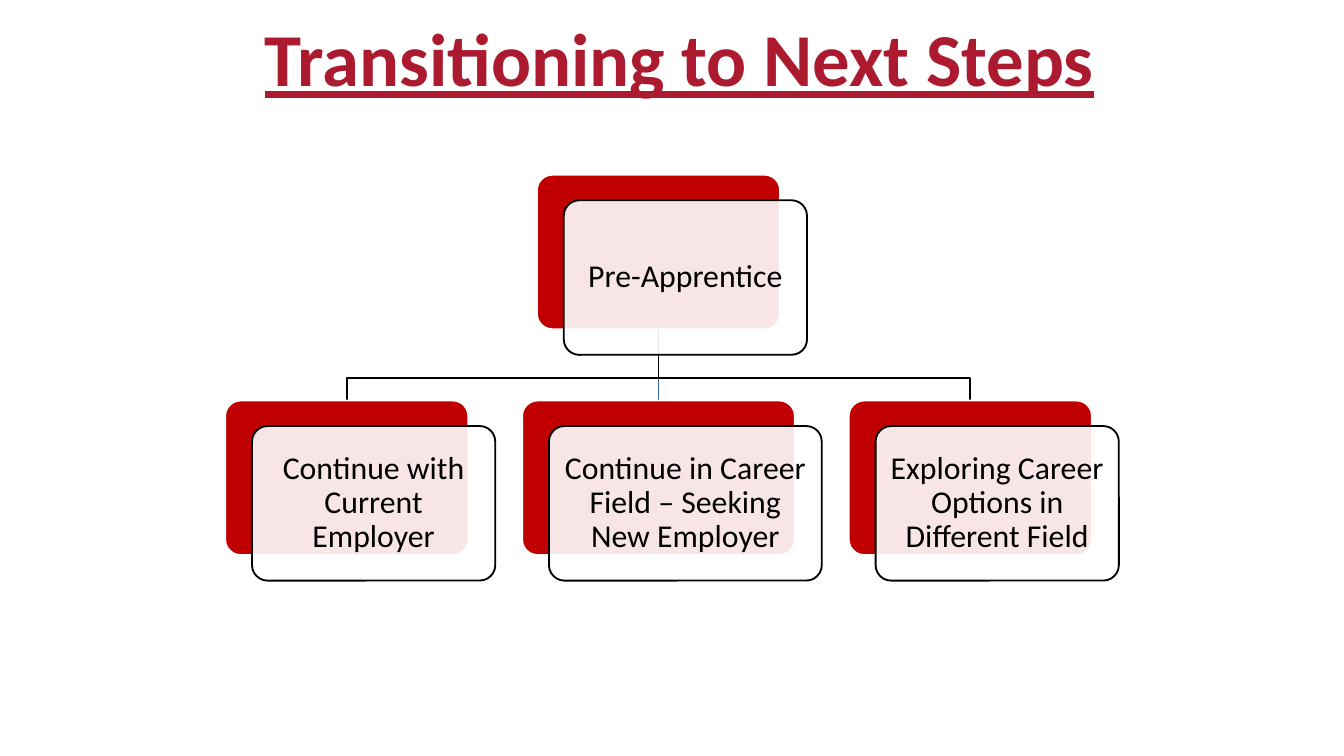
from lxml.etree import SubElement
from pptx import Presentation
from pptx.dml.color import RGBColor
from pptx.enum.shapes import MSO_CONNECTOR, MSO_SHAPE
from pptx.enum.text import MSO_ANCHOR as Anchor, PP_ALIGN as Align
from pptx.oxml.ns import qn
from pptx.util import Inches, Pt

COLORS = {"title": "AC1A2F", "back": "C00000", "card": "FFFFFF",
          "ink": "000000", "middle_line": "365B9D"}
FONT = "Calibri"

# Org chart grid, in inches
CENTER = 4.9
BRANCH = 2.32
NODE_W, WIDE_W, NODE_H = 1.81, 2.03, 1.15
ROOT_TOP, OPTION_TOP = 1.3, 2.98
ROOT_BOTTOM = ROOT_TOP + NODE_H
BUS_Y = 2.81
CARD_DX, CARD_DY = 0.2, 0.19

OPTIONS = [
    ("Continue with Current Employer", CENTER - BRANCH, NODE_W),
    ("Continue in Career Field – Seeking New Employer", CENTER, WIDE_W),
    ("Exploring Career Options in Different Field", CENTER + BRANCH, NODE_W),
]


def rgb(name):
    return RGBColor.from_string(COLORS[name])


def style_line(line, color):
    line.color.rgb = rgb(color)
    line.width = Pt(1)


def style_text(frame, text, size, color, inset_x, inset_y):
    frame.word_wrap = True
    frame.vertical_anchor = Anchor.MIDDLE
    frame.margin_left = frame.margin_right = Inches(inset_x)
    frame.margin_top = frame.margin_bottom = Inches(inset_y)
    paragraph = frame.paragraphs[0]
    paragraph.text = text
    paragraph.alignment = Align.CENTER
    paragraph.line_spacing = 0.9
    font = paragraph.font
    font.name, font.size, font.color.rgb = FONT, Pt(size), rgb(color)
    return font


def add_title(slide, text):
    title = slide.shapes.title
    title.left, title.top = Inches(0.4), Inches(0.09)
    title.width, title.height = Inches(9.31), Inches(0.75)
    font = style_text(title.text_frame, text, 40, "title", 0.1, 0.05)
    font.bold = font.underline = True


def add_elbow(slide, end_x):
    """Line from the root down to the bus, across, and down to an option."""
    builder = slide.shapes.build_freeform(Inches(CENTER), Inches(ROOT_BOTTOM))
    corners = [(CENTER, BUS_Y), (end_x, BUS_Y), (end_x, OPTION_TOP)]
    builder.add_line_segments([(Inches(x), Inches(y)) for x, y in corners],
                              close=False)
    elbow = builder.convert_to_shape()
    elbow.shadow.inherit = False
    elbow.fill.background()
    style_line(elbow.line, "ink")


def add_drop(slide):
    """Straight line from the root to the middle option."""
    drop = slide.shapes.add_connector(
        MSO_CONNECTOR.STRAIGHT, Inches(CENTER), Inches(ROOT_BOTTOM),
        Inches(CENTER), Inches(OPTION_TOP))
    style_line(drop.line, "middle_line")
    SubElement(drop._element.spPr, qn("a:effectLst"))


def add_panel(slide, left, top, width, fill, line):
    panel = slide.shapes.add_shape(
        MSO_SHAPE.ROUNDED_RECTANGLE,
        Inches(left), Inches(top), Inches(width), Inches(NODE_H))
    panel.adjustments[0] = 0.1
    panel.shadow.inherit = False
    panel.fill.solid()
    panel.fill.fore_color.rgb = rgb(fill)
    style_line(panel.line, line)
    return panel


def add_node(slide, text, center, top, width):
    """Red panel with a translucent text card offset in front of it."""
    left = center - width / 2
    add_panel(slide, left, top, width, "back", "card")
    card = add_panel(slide, left + CARD_DX, top + CARD_DY, width, "card", "ink")
    card_color = card._element.spPr.find(qn("a:solidFill"))[0]
    SubElement(card_color, qn("a:alpha"), val="90000")
    style_text(card.text_frame, text, 17, "ink", 0.06, 0.06)


def main():
    prs = Presentation()
    prs.slide_width = Inches(10)
    prs.slide_height = prs.slide_width * 9 // 16
    slide = prs.slides.add_slide(prs.slide_layouts[5])
    add_title(slide, "Transitioning to Next Steps")

    # Connecting lines, behind the nodes
    add_elbow(slide, CENTER + BRANCH)
    add_drop(slide)
    add_elbow(slide, CENTER - BRANCH)

    # Root and its options
    add_node(slide, "Pre-Apprentice", CENTER, ROOT_TOP, NODE_W)
    for text, center, width in OPTIONS:
        add_node(slide, text, center, OPTION_TOP, width)

    prs.save("out.pptx")


if __name__ == "__main__":
    main()
